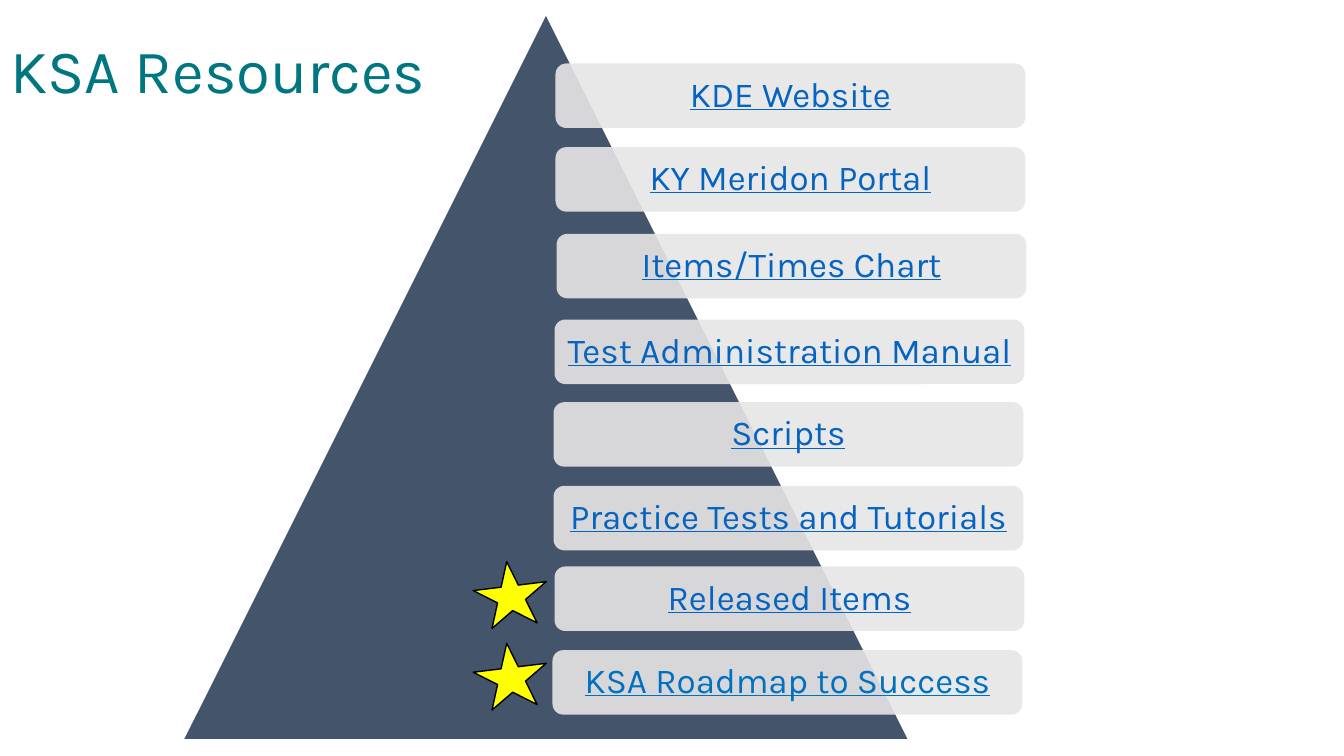
"""Build the KSA Resources slide: a pyramid with a stack of resource links."""
import pptx
import pptx.util
import pptx.dml.color
import pptx.enum.shapes
import pptx.enum.text
import pptx.oxml
import pptx.oxml.ns

Inches, Pt = pptx.util.Inches, pptx.util.Pt
SHAPE = pptx.enum.shapes.MSO_SHAPE
ALIGN = pptx.enum.text.PP_ALIGN
MIDDLE = pptx.enum.text.MSO_ANCHOR.MIDDLE

TITLE = "KSA Resources"
LINK_BLUE = "0563C1"
RESOURCES = [
    ("KDE Website", 5.51, 0.63, LINK_BLUE),
    ("KY Meridon Portal", 5.51, 1.46, LINK_BLUE),
    ("Items/Times Chart", 5.52, 2.32, LINK_BLUE),
    ("Test Administration Manual", 5.5, 3.17, LINK_BLUE),
    ("Scripts", 5.49, 3.99, LINK_BLUE),
    ("Practice Tests and Tutorials", 5.49, 4.82, LINK_BLUE),
    ("Released Items", 5.5, 5.62, LINK_BLUE),
    ("KSA Roadmap to Success", 5.48, 6.45, "0070C0"),
]
STAR_TOPS = [6.38, 5.57]
BAR_WIDTH, BAR_HEIGHT = 4.66, 0.64


def rgb(value):
    return pptx.dml.color.RGBColor.from_string(value)


def add_filled(slide, preset, box, color):
    shape = slide.shapes.add_shape(preset, *map(Inches, box))
    shape.shadow.inherit = False
    shape.fill.solid()
    shape.fill.fore_color.rgb = rgb(color)
    shape.line.fill.background()
    return shape


def set_opacity(shape, percent):
    color = shape._element.spPr.find(".//" + pptx.oxml.ns.qn("a:srgbClr"))
    alpha = pptx.oxml.parse_xml(
        f'<a:alpha {pptx.oxml.ns.nsdecls("a")} val="{percent * 1000}"/>')
    color.append(alpha)


def write(frame, text, size, color, align, underline=False):
    frame.word_wrap = True
    frame.vertical_anchor = MIDDLE
    paragraph = frame.paragraphs[0]
    paragraph.alignment = align
    paragraph.line_spacing = 0.9
    run = paragraph.add_run()
    run.text = text
    run.font.name = "Karla"
    run.font.size = Pt(size)
    run.font.color.rgb = rgb(color)
    run.font.underline = underline


def add_resource(slide, label, left, top, color):
    bar = add_filled(slide, SHAPE.ROUNDED_RECTANGLE,
                     (left, top, BAR_WIDTH, BAR_HEIGHT), "E7E6E6")
    set_opacity(bar, 90)
    frame = bar.text_frame
    frame.margin_left = frame.margin_right = Inches(0.1)
    frame.margin_top = frame.margin_bottom = Inches(0.1)
    write(frame, label, 25, color, ALIGN.CENTER, underline=True)


def add_star(slide, top):
    star = add_filled(slide, SHAPE.STAR_5_POINT, (4.7, top, 0.73, 0.64), "FFFF00")
    star.rotation = 353
    star.line.color.rgb = rgb("000000")
    star.line.width = Pt(1)


def main():
    deck = pptx.Presentation()
    deck.slide_width, deck.slide_height = Inches(13.33), Inches(7.5)
    slide = deck.slides.add_slide(deck.slide_layouts[5])

    title = slide.shapes.title
    title.left, title.top = Inches(0), Inches(0)
    title.width, title.height = Inches(11.5), Inches(1.45)
    write(title.text_frame, TITLE, 44, "007780", ALIGN.LEFT)

    add_filled(slide, SHAPE.ISOSCELES_TRIANGLE, (1.83, 0.16, 7.17, 7.17), "44546A")
    for resource in RESOURCES:
        add_resource(slide, *resource)
    for top in STAR_TOPS:
        add_star(slide, top)

    deck.save("out.pptx")


if __name__ == "__main__":
    main()
